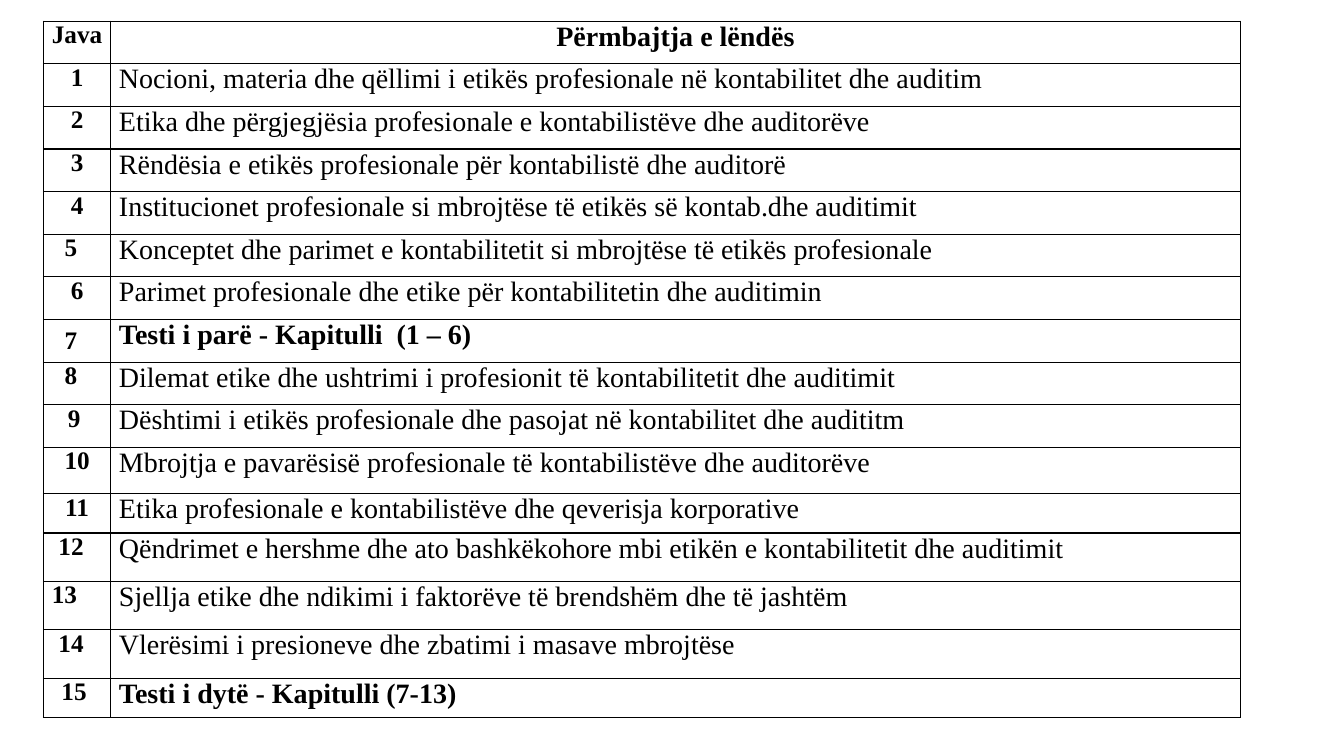
from dataclasses import dataclass

from lxml.etree import SubElement
from pptx import Presentation
from pptx.dml.color import RGBColor
from pptx.enum.text import MSO_ANCHOR, PP_ALIGN
from pptx.oxml.ns import qn
from pptx.util import Inches, Pt


@dataclass(frozen=True)
class Theme:
    font: str = "Times New Roman"
    ink: str = "000000"
    paper: str = "FFFFFF"
    week_size: int = 18
    topic_size: int = 20
    border: int = 1
    inset: float = 0.08


THEME = Theme()
HEADINGS = ("Java", "Përmbajtja e lëndës")
TOPICS = [
    "Nocioni, materia dhe qëllimi i etikës profesionale në kontabilitet dhe auditim",
    "Etika dhe përgjegjësia profesionale e kontabilistëve dhe auditorëve",
    "Rëndësia e etikës profesionale për kontabilistë dhe auditorë",
    "Institucionet profesionale si mbrojtëse të etikës së kontab.dhe auditimit",
    "Konceptet dhe parimet e kontabilitetit si mbrojtëse të etikës profesionale",
    "Parimet profesionale dhe etike për kontabilitetin dhe auditimin",
    "Testi i parë - Kapitulli  (1 – 6)",
    "Dilemat etike dhe ushtrimi i profesionit të kontabilitetit dhe auditimit",
    "Dështimi i etikës profesionale dhe pasojat në kontabilitet dhe audititm",
    "Mbrojtja e pavarësisë profesionale të kontabilistëve dhe auditorëve",
    "Etika profesionale e kontabilistëve dhe qeverisja korporative",
    "Qëndrimet e hershme dhe ato bashkëkohore mbi etikën e kontabilitetit dhe auditimit",
    "Sjellja etike dhe ndikimi i faktorëve të brendshëm dhe të jashtëm",
    "Vlerësimi i presioneve dhe zbatimi i masave mbrojtëse",
    "Testi i dytë - Kapitulli (7-13)",
]
TEST_WEEKS = {7, 15}
MIDDLE_WEEK = 7
WEEK_SHIFTS = {5: 0.12, 7: 0.12, 8: 0.12, 9: 0.06, 12: 0.12, 13: 0.25, 14: 0.12, 15: 0.06}
SPECIAL_HEIGHTS = {10: 0.46, 11: 0.39, 12: 0.48, 13: 0.48, 14: 0.48, 15: 0.39}
WEEK_WIDTH = 0.67


def add_borders(cell):
    properties = cell._tc.get_or_add_tcPr()
    for side in ("lnL", "lnR", "lnT", "lnB"):
        border = SubElement(properties, qn(f"a:{side}"), w=str(Pt(THEME.border)))
        fill = SubElement(border, qn("a:solidFill"))
        SubElement(fill, qn("a:srgbClr"), val=THEME.ink)


def fill_cell(cell, text, size, bold, align, shift=0):
    add_borders(cell)
    cell.fill.solid()
    cell.fill.fore_color.rgb = RGBColor.from_string(THEME.paper)
    cell.margin_left = Inches(THEME.inset)
    cell.margin_right = Inches(THEME.inset + shift)
    cell.margin_top = cell.margin_bottom = 0
    paragraph = cell.text_frame.paragraphs[0]
    paragraph.text = text
    paragraph.alignment = align
    font = paragraph.runs[0].font
    font.name = THEME.font
    font.size = Pt(size)
    font.bold = bold
    font.color.rgb = RGBColor.from_string(THEME.ink)


def add_syllabus(slide, left, top, width, height):
    row_count = len(TOPICS) + 1
    syllabus = slide.shapes.add_table(
        row_count, 2, Inches(left), Inches(top), Inches(width), Inches(height)
    ).table
    syllabus.columns[0].width = Inches(WEEK_WIDTH)
    syllabus.columns[1].width = Inches(width - WEEK_WIDTH)

    regular_height = (height - sum(SPECIAL_HEIGHTS.values())) / (row_count - len(SPECIAL_HEIGHTS))
    for week, row in enumerate(syllabus.rows):
        row.height = Inches(SPECIAL_HEIGHTS.get(week, regular_height))

    for column, (heading, size) in enumerate(zip(HEADINGS, (THEME.week_size, THEME.topic_size))):
        fill_cell(syllabus.cell(0, column), heading, size, True, PP_ALIGN.CENTER)

    for week, topic in enumerate(TOPICS, start=1):
        fill_cell(syllabus.cell(week, 0), str(week), THEME.week_size, True,
                  PP_ALIGN.CENTER, WEEK_SHIFTS.get(week, 0))
        fill_cell(syllabus.cell(week, 1), topic, THEME.topic_size,
                  week in TEST_WEEKS, PP_ALIGN.LEFT)
    syllabus.cell(MIDDLE_WEEK, 0).vertical_anchor = MSO_ANCHOR.MIDDLE


def main():
    presentation = Presentation()
    presentation.slide_width = Inches(13.33)
    presentation.slide_height = Inches(7.5)
    slide = presentation.slides.add_slide(presentation.slide_layouts[6])
    add_syllabus(slide, 0.43, 0.21, 11.87, 6.91)
    presentation.save("out.pptx")


if __name__ == "__main__":
    main()
